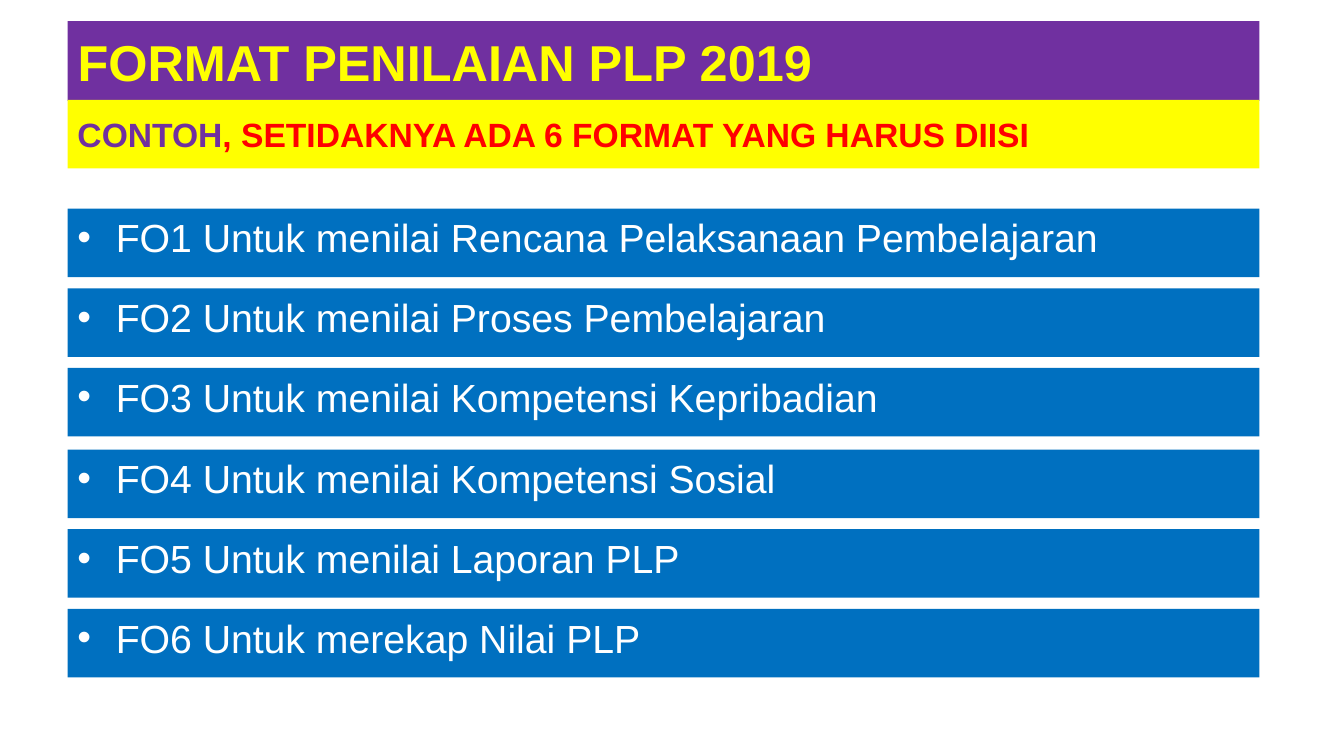
import pptx
import pptx.util
import pptx.dml.color
import pptx.enum.shapes
import pptx.enum.text
from lxml import etree

Inches = pptx.util.Inches
ANCHOR = pptx.enum.text.MSO_ANCHOR

PURPLE, YELLOW, RED, BLUE, WHITE = "7030A0", "FFFF00", "FF0000", "0070C0", "FFFFFF"
LEFT, WIDTH, BAND_HEIGHT = 0.67, 11.82, 0.68
FORMATS_TOP, ROW_PITCH, GROUP_PITCH, GROUP_SIZE = 2.07, 0.79, 2.39, 3
BULLET_INDENT = Inches(0.38)

formats = [
    "FO1 Untuk menilai Rencana Pelaksanaan Pembelajaran",
    "FO2 Untuk menilai Proses Pembelajaran",
    "FO3 Untuk menilai Kompetensi Kepribadian",
    "FO4 Untuk menilai Kompetensi Sosial",
    "FO5 Untuk menilai Laporan PLP",
    "FO6 Untuk merekap Nilai PLP",
]


def rgb(value):
    return pptx.dml.color.RGBColor.from_string(value)


def fill_band(band, fill, anchor, runs, size, bold):
    """Colour a band and write its (text, colour) runs; return the paragraph."""
    band.fill.solid()
    band.fill.fore_color.rgb = rgb(fill)
    band.line.fill.background()
    frame_format = {
        "word_wrap": True,
        "auto_size": pptx.enum.text.MSO_AUTO_SIZE.NONE,
        "vertical_anchor": anchor,
    }
    for name, value in frame_format.items():
        setattr(band.text_frame, name, value)
    paragraph = band.text_frame.paragraphs[0]
    paragraph.alignment = pptx.enum.text.PP_ALIGN.LEFT
    for text, colour in runs:
        run = paragraph.add_run()
        run.text = text
        run.font.color.rgb = rgb(colour)
        font_format = {"name": "Arial", "size": pptx.util.Pt(size), "bold": bold}
        for name, value in font_format.items():
            setattr(run.font, name, value)
    return paragraph


deck = pptx.Presentation()
deck.slide_width, deck.slide_height = Inches(13.33), Inches(7.5)
slide = deck.slides.add_slide(deck.slide_layouts.get_by_name("Title Only"))

heading = slide.shapes.title
heading_place = {"left": LEFT, "top": 0.21, "width": WIDTH, "height": 0.79}
for side, length in heading_place.items():
    setattr(heading, side, Inches(length))
fill_band(heading, PURPLE, ANCHOR.MIDDLE,
          [("FORMAT PENILAIAN PLP 2019", YELLOW)], 36, True)

band_tops = [0.99] + [
    FORMATS_TOP + row // GROUP_SIZE * GROUP_PITCH + row % GROUP_SIZE * ROW_PITCH
    for row in range(len(formats))
]
bands = []
for top in band_tops:
    band = slide.shapes.add_shape(
        pptx.enum.shapes.MSO_SHAPE.RECTANGLE,
        Inches(LEFT), Inches(top), Inches(WIDTH), Inches(BAND_HEIGHT))
    band.shadow.inherit = False
    bands.append(band)

subtitle, *format_bands = bands
fill_band(subtitle, YELLOW, ANCHOR.MIDDLE,
          [("CONTOH", PURPLE),
           (", SETIDAKNYA ADA 6 FORMAT YANG HARUS DIISI", RED)], 24, True)

for band, text in zip(format_bands, formats):
    item = fill_band(band, BLUE, ANCHOR.TOP, [(text, WHITE)], 28, False)
    properties = item._p.get_or_add_pPr()
    properties.set("marL", str(BULLET_INDENT))
    properties.set("indent", str(-BULLET_INDENT))
    namespace = properties.nsmap["a"]
    etree.SubElement(properties, f"{{{namespace}}}buFont", typeface="Arial")
    etree.SubElement(properties, f"{{{namespace}}}buChar", char="•")

deck.save("out.pptx")
